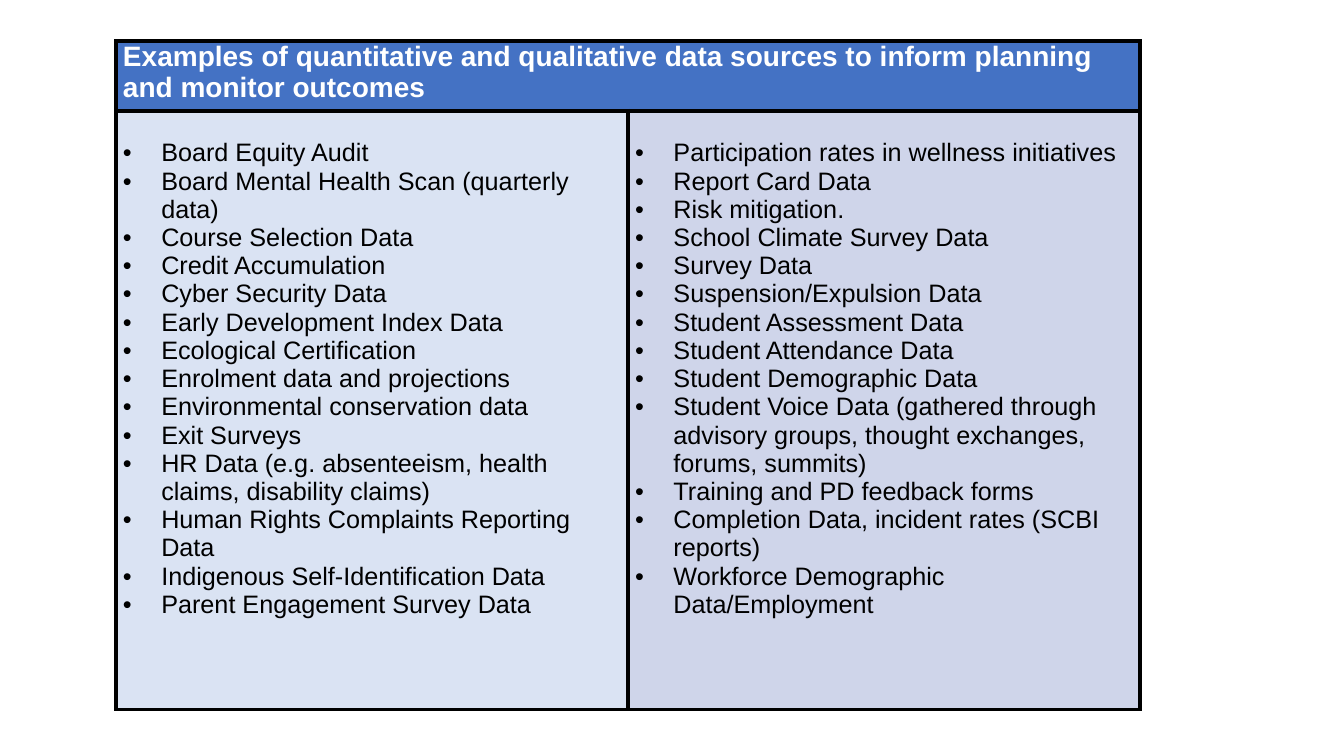
import lxml.etree
import pptx
import pptx.dml.color
import pptx.oxml.ns
import pptx.util

THEME = {
    "font": "Arial", "heading_size": 20, "item_size": 18, "border": 3,
    "heading_fill": "4472C4", "heading_text": "FFFFFF", "text": "000000", "line": "000000",
    "left_fill": "DAE3F3", "right_fill": "CFD5EA",
}
qn = pptx.oxml.ns.qn
inches = pptx.util.Inches
colour = pptx.dml.color.RGBColor.from_string


def write(paragraph, text, size, color, bold=False, bullet=None, indent=0.38):
    if bullet:
        properties = paragraph._p.get_or_add_pPr()
        properties.set("marL", str(inches(indent)))
        properties.set("indent", str(-inches(indent)))
        lxml.etree.SubElement(properties, qn("a:buFont")).set("typeface", THEME["font"])
        lxml.etree.SubElement(properties, qn("a:buChar")).set("char", bullet)
    run = paragraph.add_run()
    run.text = text
    run.font.name = THEME["font"]
    run.font.size = pptx.util.Pt(size)
    run.font.bold = bold
    run.font.color.rgb = colour(color)


def style_cell(cell, fill, top=0):
    properties = cell._tc.get_or_add_tcPr()
    for side in ("lnL", "lnR", "lnT", "lnB"):
        border = lxml.etree.SubElement(properties, qn(f"a:{side}"))
        border.set("w", str(pptx.util.Pt(THEME["border"])))
        solid = lxml.etree.SubElement(border, qn("a:solidFill"))
        lxml.etree.SubElement(solid, qn("a:srgbClr")).set("val", THEME["line"])
    cell.fill.solid()
    cell.fill.fore_color.rgb = colour(fill)
    cell.margin_left = cell.margin_right = inches(0.07)
    cell.margin_top, cell.margin_bottom = inches(top), 0


heading = "Examples of quantitative and qualitative data sources to inform planning and monitor outcomes"
sources = [
    (THEME["left_fill"], [
        "Board Equity Audit",
        "Board Mental Health Scan (quarterly data)",
        "Course Selection Data",
        "Credit Accumulation",
        "Cyber Security Data",
        "Early Development Index Data",
        "Ecological Certification",
        "Enrolment data and projections",
        "Environmental conservation data",
        "Exit Surveys",
        "HR Data (e.g. absenteeism, health claims, disability claims)",
        "Human Rights Complaints Reporting Data",
        "Indigenous Self-Identification Data",
        "Parent Engagement Survey Data",
    ]),
    (THEME["right_fill"], [
        "Participation rates in wellness initiatives",
        "Report Card Data",
        "Risk mitigation.",
        "School Climate Survey Data",
        "Survey Data",
        "Suspension/Expulsion Data",
        "Student Assessment Data",
        "Student Attendance Data",
        "Student Demographic Data",
        "Student Voice Data (gathered through advisory groups, thought exchanges, forums, summits)",
        "Training and PD feedback forms",
        "Completion Data, incident rates (SCBI reports)",
        "Workforce Demographic Data/Employment",
    ]),
]

# Slide
deck = pptx.Presentation()
deck.slide_width, deck.slide_height = inches(13.33), inches(7.5)
slide = deck.slides.add_slide(deck.slide_layouts[6])

# Table grid: one heading row over two equal columns
column_width = 5.08
row_heights = [0.69, 5.94]
grid = slide.shapes.add_table(
    len(row_heights), len(sources), inches(1.15), inches(0.41),
    inches(column_width * len(sources)), inches(sum(row_heights))).table
for column in grid.columns:
    column.width = inches(column_width)
for row, height in zip(grid.rows, row_heights):
    row.height = inches(height)

# Heading
for heading_cell in grid.rows[0].cells:
    style_cell(heading_cell, THEME["heading_fill"])
grid.cell(0, 0).merge(grid.cell(0, len(sources) - 1))
write(grid.cell(0, 0).text_frame.paragraphs[0], heading,
      size=THEME["heading_size"], color=THEME["heading_text"], bold=True)

# Data sources, one line below the top of each column
for position, (fill, items) in enumerate(sources):
    source_cell = grid.cell(1, position)
    style_cell(source_cell, fill, top=0.28)
    frame = source_cell.text_frame
    for number, item in enumerate(items):
        line = frame.add_paragraph() if number else frame.paragraphs[0]
        write(line, item, size=THEME["item_size"], color=THEME["text"], bullet="•")

deck.save("out.pptx")
